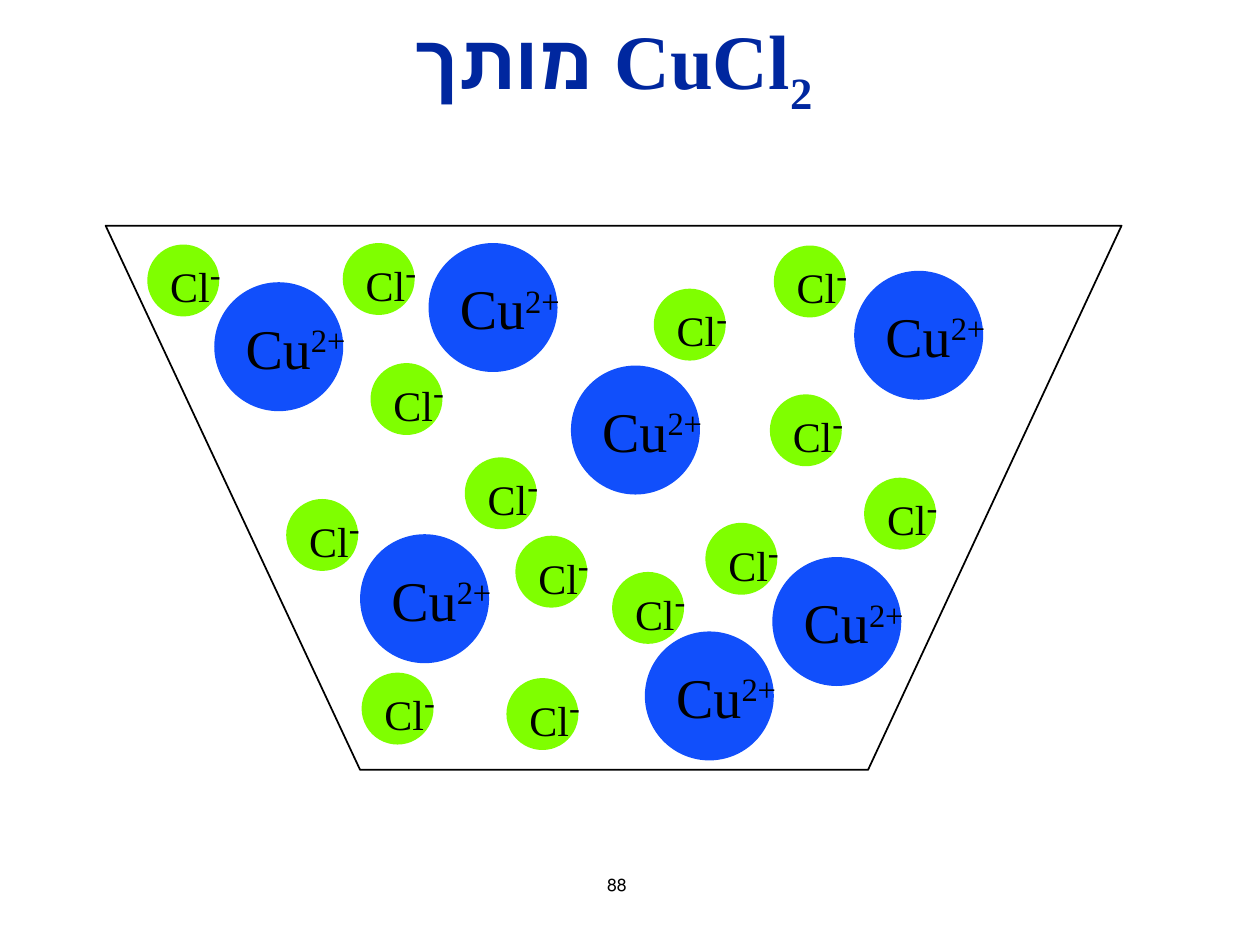
from pptx import Presentation
from pptx.dml.color import RGBColor
from pptx.enum.shapes import MSO_SHAPE
from pptx.enum.text import MSO_ANCHOR, MSO_AUTO_SIZE, PP_ALIGN
from pptx.util import Cm, Pt

OVAL = MSO_SHAPE.OVAL
MIDDLE = MSO_ANCHOR.MIDDLE
NO_AUTOFIT = MSO_AUTO_SIZE.NONE
LEFT, CENTER, RIGHT = PP_ALIGN.LEFT, PP_ALIGN.CENTER, PP_ALIGN.RIGHT

FONT = "Times New Roman"
COLORS = {"title": "00279F", "text": "000000", "chloride": "7FFF00", "copper": "114FFB"}

BEAKER = [(2.13, 4.55), (7.26, 15.52), (17.5, 15.52), (22.61, 4.55)]

# Runs are (text, size in points, baseline shift in thousandths of a percent).
CHLORIDE = {"diameter": 1.45, "color": "chloride", "runs": [("Cl", 24, 0), ("-", 32, 30000)]}
COPPER = {"diameter": 2.6, "color": "copper", "runs": [("Cu", 32, 0), ("2+", 32, 30000)]}

CHLORIDE_PLACES = [
    (2.97, 4.93), (6.91, 4.9), (15.6, 4.95), (13.18, 5.82), (7.47, 7.32),
    (15.52, 7.95), (9.37, 9.22), (5.77, 10.06), (17.42, 9.63), (10.39, 10.8),
    (14.22, 10.54), (12.34, 11.53), (7.29, 13.56), (10.21, 13.67),
]
COPPER_PLACES = [
    (4.32, 5.69), (8.64, 4.9), (17.22, 5.46), (11.51, 7.37),
    (7.26, 10.77), (15.57, 11.23), (13, 12.73),
]


def rgb(name):
    return RGBColor.from_string(COLORS[name])


class SlideBuilder:
    def __init__(self, deck):
        self.slide = deck.slides.add_slide(deck.slide_layouts[5])
        self.group = self.slide.shapes.add_group_shape()

    def add_runs(self, para, runs, color="text", bold=False, align=LEFT, rtl=False):
        para.alignment = align
        if rtl:
            para._p.get_or_add_pPr().set("rtl", "1")
        for text, size, baseline in runs:
            span = para.add_run()
            span.text = text
            style = {"name": FONT, "size": Pt(size), "bold": bold}
            for key, value in style.items():
                setattr(span.font, key, value)
            span.font.color.rgb = rgb(color)
            if baseline:
                span._r.get_or_add_rPr().set("baseline", str(baseline))

    def title(self, runs, left, top, width, height):
        box = self.slide.shapes.title
        place = {"left": left, "top": top, "width": width, "height": height}
        for key, value in place.items():
            setattr(box, key, Cm(value))
        frame = box.text_frame
        frame.auto_size = NO_AUTOFIT
        frame.vertical_anchor = MIDDLE
        para = frame.paragraphs[0]
        self.add_runs(para, runs, "title", bold=True, align=CENTER, rtl=True)
        para.add_line_break()

    def outline(self, corners):
        points = [(Cm(x), Cm(y)) for x, y in corners]
        builder = self.group.shapes.build_freeform(*points[0])
        builder.add_line_segments(points[1:], close=True)
        shape = builder.convert_to_shape()
        shape.shadow.inherit = False
        shape.fill.background()
        shape.line.color.rgb = rgb("text")
        shape.line.width = Pt(1)

    def ion(self, kind, left, top):
        size = Cm(kind["diameter"])
        circle = self.group.shapes.add_shape(OVAL, Cm(left), Cm(top), size, size)
        circle.shadow.inherit = False
        circle.fill.solid()
        circle.fill.fore_color.rgb = rgb(kind["color"])
        circle.line.fill.background()
        frame = circle.text_frame
        frame.word_wrap = False
        frame.vertical_anchor = MIDDLE
        self.add_runs(frame.paragraphs[0], kind["runs"])

    def page_number(self, text, left, top, width, height):
        box = self.slide.shapes.add_textbox(Cm(left), Cm(top), Cm(width), Cm(height))
        box.text_frame.word_wrap = True
        self.add_runs(box.text_frame.paragraphs[0], [(text, 10, 0)], align=RIGHT, rtl=True)


def main():
    deck = Presentation()
    deck.slide_width, deck.slide_height = Cm(25.4), Cm(19.05)
    page = SlideBuilder(deck)
    page.title([("CuCl", 44, 0), ("2", 44, -25000), (" מותך", 44, 0)], 1.55, 0.66, 21.59, 3.18)
    page.outline(BEAKER)
    for kind, places in ((CHLORIDE, CHLORIDE_PLACES), (COPPER, COPPER_PLACES)):
        for left, top in places:
            page.ion(kind, left, top)
    page.page_number("88", 11.38, 17.5, 1.5, 0.69)
    deck.save("out.pptx")


if __name__ == "__main__":
    main()
